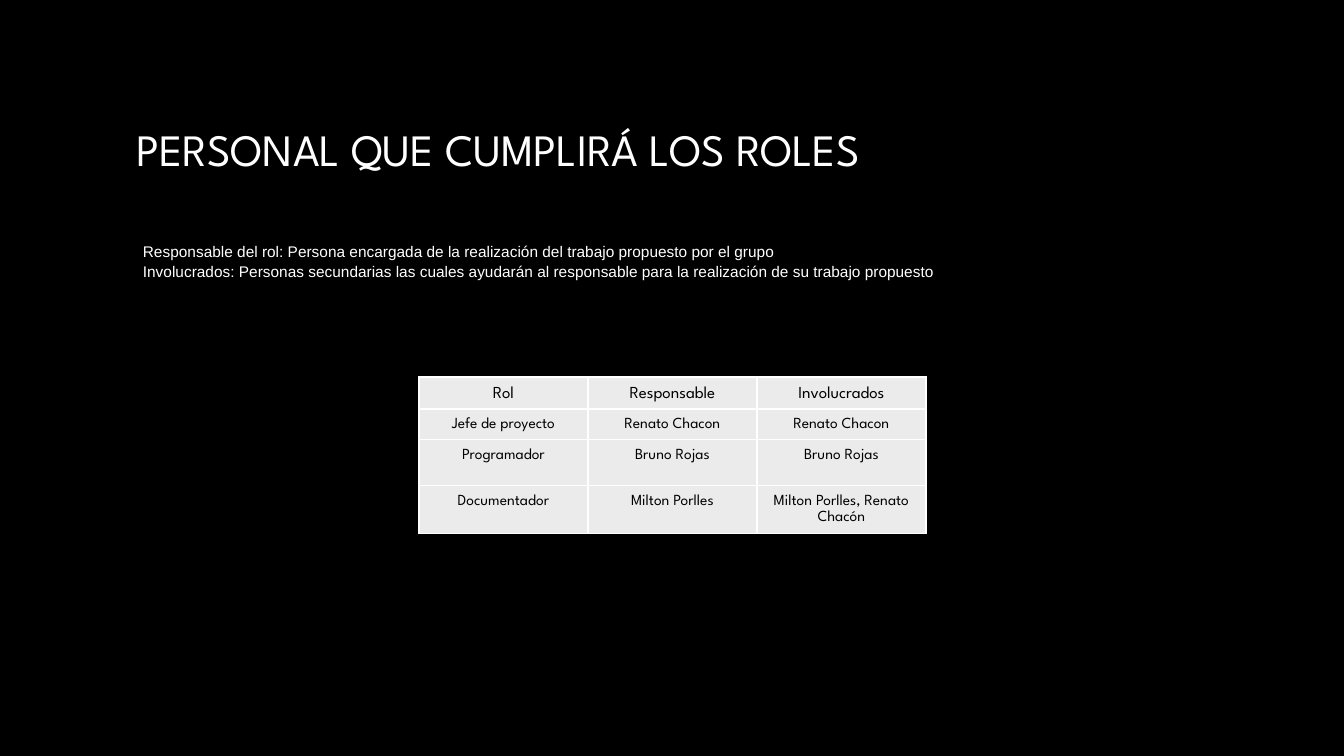
from dataclasses import dataclass

from lxml import etree
from pptx import Presentation
from pptx.dml.color import RGBColor
from pptx.enum import text
from pptx.oxml import ns
from pptx.util import Pt

PX = 914400 / 100.8


@dataclass(frozen=True)
class Theme:
    back: str = "000000"
    light: str = "FFFFFF"
    dark: str = "000000"
    cell: str = "EBEBEB"
    face: str = "League Spartan"
    plain: str = "Arial"
    title: int = 32
    head: int = 12
    body: int = 11


THEME = Theme()

TITLE = "PERSONAL QUE CUMPLIRÁ LOS ROLES"
NOTES = [
    "Responsable del rol: Persona encargada de la realización del trabajo propuesto por el grupo",
    "Involucrados: Personas secundarias las cuales ayudarán al responsable para la realización de su trabajo propuesto",
]
ROLES = [
    ["Rol", "Responsable", "Involucrados"],
    ["Jefe de proyecto", "Renato Chacon", "Renato Chacon"],
    ["Programador", "Bruno Rojas", "Bruno Rojas"],
    ["Documentador", "Milton Porlles", "Milton Porlles, Renato Chacón"],
]
WIDTH = 169
HEIGHTS = [32, 30, 46, 48]


def px(num):
    return round(num * PX)


def apply(item, **vals):
    for key, val in vals.items():
        setattr(item, key, val)


def paint(fill, color):
    fill.solid()
    fill.fore_color.rgb = RGBColor.from_string(color)


def write(frame, lines, face, size, color, align, space):
    frame.text = "\n".join(lines)
    for par in frame.paragraphs:
        apply(par, alignment=align, line_spacing=space)
        for run in par.runs:
            apply(run.font, name=face, size=Pt(size), bold=False)
            paint(run.font.fill, color)


def place(shape, left, top, width, height):
    apply(shape, left=px(left), top=px(top), width=px(width), height=px(height))


def add_title(slide):
    title = slide.shapes.title
    place(title, 126, 67, 1092, 169)
    apply(title.text_frame, vertical_anchor=text.MSO_ANCHOR.MIDDLE, word_wrap=True)
    write(title.text_frame, [TITLE], THEME.face, THEME.title, THEME.light,
          text.PP_ALIGN.LEFT, 0.9)


def add_notes(slide):
    box = slide.shapes.add_textbox(px(133), px(236), px(1085), px(50))
    apply(box.text_frame, vertical_anchor=text.MSO_ANCHOR.MIDDLE, word_wrap=True)
    write(box.text_frame, NOTES, THEME.plain, THEME.body, THEME.light,
          text.PP_ALIGN.LEFT, 1.08)


def edge(cell):
    props = cell._tc.get_or_add_tcPr()
    for spot, side in enumerate(["lnL", "lnR", "lnT", "lnB"]):
        line = etree.Element(ns.qn(f"a:{side}"), w=str(Pt(1)))
        fill = etree.SubElement(line, ns.qn("a:solidFill"))
        etree.SubElement(fill, ns.qn("a:srgbClr"), val=THEME.light)
        props.insert(spot, line)


def add_table(slide):
    cols = len(ROLES[0])
    table = slide.shapes.add_table(len(ROLES), cols, px(419), px(377),
                                   px(WIDTH * cols), px(sum(HEIGHTS))).table
    for col in table.columns:
        col.width = px(WIDTH)
    for row, names, height in zip(table.rows, ROLES, HEIGHTS):
        row.height = px(height)
        size = THEME.head if names is ROLES[0] else THEME.body
        for cell, name in zip(row.cells, names):
            for side in ["left", "right", "top", "bottom"]:
                setattr(cell, f"margin_{side}", px(7))
            paint(cell.fill, THEME.cell)
            edge(cell)
            write(cell.text_frame, [name], THEME.face, size, THEME.dark,
                  text.PP_ALIGN.CENTER, 1.15)


def main():
    deck = Presentation()
    apply(deck, slide_width=px(1344), slide_height=px(756))
    slide = deck.slides.add_slide(deck.slide_layouts[5])
    paint(slide.background.fill, THEME.back)
    add_title(slide)
    add_table(slide)
    add_notes(slide)
    deck.save("out.pptx")


if __name__ == "__main__":
    main()
